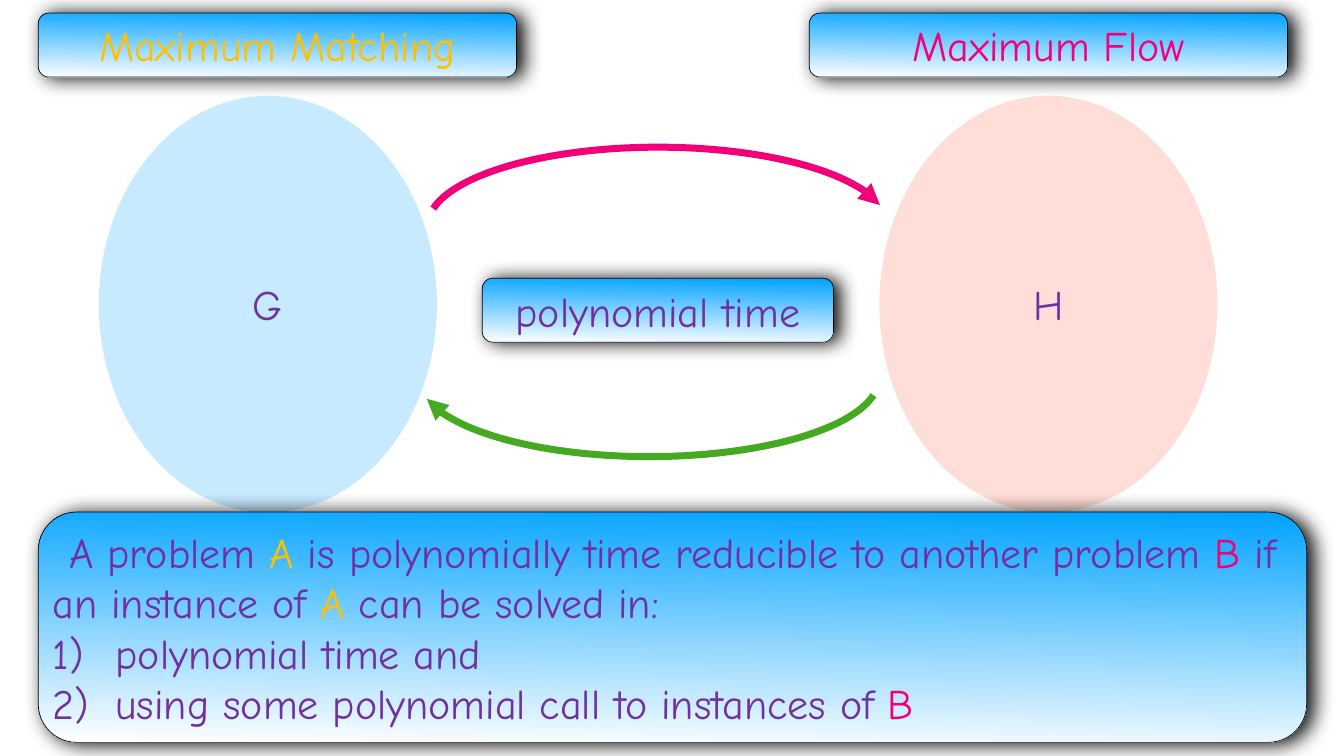
from lxml import etree
from pptx import Presentation
from pptx.dml.color import RGBColor
from pptx.enum.shapes import MSO_SHAPE as Preset
from pptx.enum.text import MSO_ANCHOR as Anchor, PP_ALIGN as Align
from pptx.oxml.ns import qn
from pptx.util import Inches, Pt

PURPLE, YELLOW, PINK, GREEN = "7030A0", "FFC000", "F10079", "45AA21"
BLUE, WHITE, BLACK = "00A2FF", "FFFFFF", "000000"
PALE_BLUE, PALE_RED = "66C7FF", "FFA295"


def color(hex_text):
    return RGBColor.from_string(hex_text)


def add_child(parent, tag, **attributes):
    """Append a DrawingML element, turning attribute values into text."""
    texts = {name: str(value) for name, value in attributes.items()}
    return etree.SubElement(parent, qn(tag), texts)


def write(para, *spans, font="Comic Neue", size=60, ink=PURPLE, align=Align.CENTER):
    """Fill a paragraph; a span is a text, or a (text, colour) pair."""
    para.alignment = align
    for item in spans:
        text, tint = (item, ink) if isinstance(item, str) else item
        span = para.add_run()
        span.text = text
        span.font.name = font
        span.font.size = Pt(size)
        span.font.color.rgb = color(tint)


def number(para, indent=1.25):
    """Number a paragraph as 1), 2), ... with a hanging indent."""
    props = para._p.get_or_add_pPr()
    props.set("marL", str(Inches(indent)))
    props.set("indent", str(-Inches(indent)))
    add_child(props, "a:buFont", typeface="+mj-lt")
    add_child(props, "a:buAutoNum", type="arabicParenR")


class Canvas:
    """Holds the style and the current slide."""

    inset = Inches(0.06)

    def __init__(self, slide):
        self.slide = slide

    def shape(self, preset, left, top, width, height):
        shape = self.slide.shapes.add_shape(
            preset, Inches(left), Inches(top), Inches(width), Inches(height))
        shape.shadow.inherit = False
        frame = shape.text_frame
        frame.word_wrap = True
        frame.vertical_anchor = Anchor.MIDDLE
        frame.margin_left = frame.margin_right = self.inset
        frame.margin_top = frame.margin_bottom = self.inset
        return shape

    def panel(self, left, top, width, height):
        """Add a rounded box with a gradient and a shadow."""
        box = self.shape(Preset.ROUNDED_RECTANGLE, left, top, width, height)
        box.fill.gradient()
        box.fill.gradient_angle = 269
        for stop, tint in zip(box.fill.gradient_stops, (BLUE, WHITE)):
            stop.color.rgb = color(tint)
        box.line.color.rgb = color(BLACK)
        box.line.width = Pt(1)
        effects = box._element.spPr.find(qn("a:effectLst"))
        shadow = add_child(effects, "a:outerShdw", blurRad=Pt(28), dist=Pt(9),
                           dir=0, algn="ctr", rotWithShape=0)
        tint = add_child(shadow, "a:srgbClr", val=BLACK)
        add_child(tint, "a:alpha", val=97000)
        return box.text_frame

    def label(self, text, left, top, width, ink=PURPLE):
        write(self.panel(left, top, width, 1.27).paragraphs[0], text, ink=ink)

    def instance_set(self, text, left, tint):
        oval = self.shape(Preset.OVAL, left, 1.9, 6.71, 8.27)
        oval.fill.solid()
        oval.fill.fore_color.rgb = color(tint)
        add_child(oval._element.spPr.find(f".//{qn('a:srgbClr')}"), "a:alpha", val=36000)
        oval.line.fill.background()
        write(oval.text_frame.paragraphs[0], text)

    def curved_arrow(self, left, top, ink, rotation=0):
        arc = self.shape(Preset.ARC, left, top, 9.13, 3.11)
        arc.adjustments[0], arc.adjustments[1] = 110.59, 212.83
        arc.rotation = rotation
        arc.fill.background()
        arc.line.color.rgb = color(ink)
        arc.line.width = Pt(10)
        add_child(arc.line._get_or_add_ln(), "a:tailEnd", type="triangle")

    def definition(self, left, top, width, height):
        frame = self.panel(left, top, width, height)
        a, b = ("A", YELLOW), ("B", PINK)
        write(frame.paragraphs[0], "A problem ", a,
              " is polynomially time reducible to another problem ", b, " if")
        write(frame.add_paragraph(), "an instance of ", a, " can be solved in:",
              align=Align.LEFT)
        for spans in (["polynomial time and"],
                      ["using some polynomial call to instances of ", b]):
            para = frame.add_paragraph()
            number(para)
            write(para, *spans, align=Align.LEFT)


def main():
    deck = Presentation()
    deck.slide_width, deck.slide_height = Inches(26.67), Inches(15)
    page = Canvas(deck.slides.add_slide(deck.slide_layouts[6]))

    page.label("Maximum Matching", 0.76, 0.26, 9.49, ink=YELLOW)
    page.label("Maximum Flow", 16.06, 0.26, 9.49, ink=PINK)
    page.instance_set("G", 1.96, PALE_BLUE)
    page.instance_set("H", 17.45, PALE_RED)
    page.curved_arrow(8.49, 2.92, PINK)
    page.curved_arrow(8.31, 5.95, GREEN, rotation=180)
    page.label("polynomial time", 9.57, 5.52, 6.97)
    page.definition(0.76, 10.16, 25.17, 4.57)

    deck.save("out.pptx")


if __name__ == "__main__":
    main()
